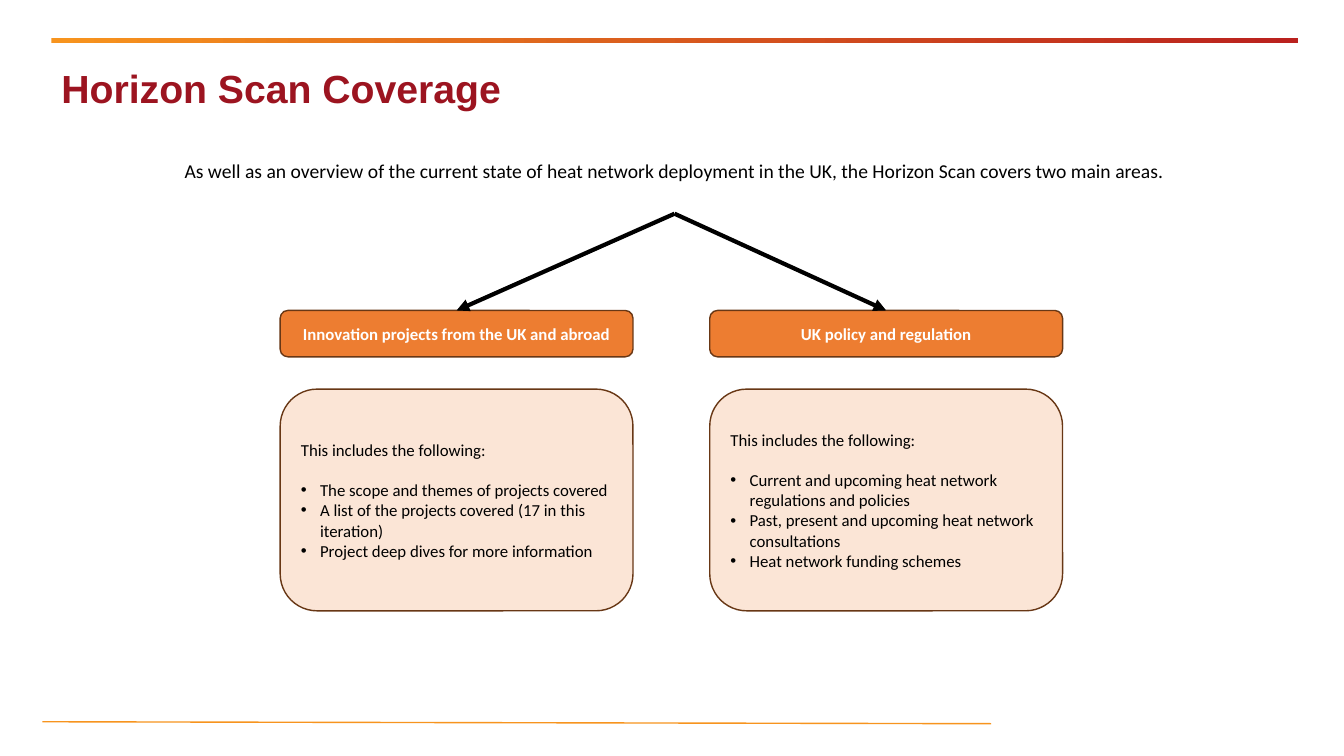
from dataclasses import dataclass

from lxml.etree import SubElement
from pptx import Presentation
from pptx.dml.color import RGBColor
from pptx.enum.dml import MSO_FILL
from pptx.enum.shapes import MSO_CONNECTOR, MSO_SHAPE
from pptx.enum.text import MSO_ANCHOR, PP_ALIGN
from pptx.oxml.ns import qn
from pptx.shapes.autoshape import Shape
from pptx.shapes.connector import Connector
from pptx.slide import Slide
from pptx.text.text import _Paragraph as Paragraph
from pptx.util import Inches, Length, Pt

BLACK = RGBColor(0x00, 0x00, 0x00)
WHITE = RGBColor(0xFF, 0xFF, 0xFF)
AMBER = RGBColor(0xF7, 0x94, 0x1E)
RED = RGBColor(0xBA, 0x21, 0x1E)
CRIMSON = RGBColor(0x9C, 0x14, 0x20)
ORANGE = RGBColor(0xED, 0x7D, 0x31)
PEACH = RGBColor(0xFB, 0xE5, 0xD6)
BROWN = RGBColor(0x68, 0x37, 0x15)

# The slide is a grid of 100 columns by 100 rows.
WIDTH, HEIGHT = Inches(13.33), Inches(7.5)
MARGIN, CONTENT_WIDTH = 3.83, 92.72
AREA_LEFT, AREA_WIDTH, AREA_PITCH = 20.85, 26.25, 31.96
HEADING_TOP, HEADING_HEIGHT = 41.07, 6.13
DETAIL_TOP, DETAIL_HEIGHT = 51.47, 29.33
FORK = (50.19, 28.27)
BULLET_INDENT = Inches(0.19)


@dataclass(frozen=True)
class Area:
    heading: str
    points: tuple[str, ...]


@dataclass(frozen=True)
class Region:
    """A place on the grid, in columns and rows."""
    left: float
    top: float
    width: float
    height: float

    def lengths(self) -> tuple[Length, Length, Length, Length]:
        return (columns(self.left), rows(self.top),
                columns(self.width), rows(self.height))


@dataclass(frozen=True)
class TextStyle:
    size: float
    color: RGBColor
    font: str = "Calibri"
    bold: bool = False
    align: PP_ALIGN = PP_ALIGN.LEFT


TITLE = TextStyle(28, CRIMSON, font="Arial", bold=True)
INTRO = TextStyle(14, BLACK, align=PP_ALIGN.CENTER)
HEADING = TextStyle(12, WHITE, bold=True, align=PP_ALIGN.CENTER)
DETAIL = TextStyle(12, BLACK)

AREAS = (
    Area("Innovation projects from the UK and abroad", (
        "The scope and themes of projects covered",
        "A list of the projects covered (17 in this iteration)",
        "Project deep dives for more information")),
    Area("UK policy and regulation", (
        "Current and upcoming heat network regulations and policies",
        "Past, present and upcoming heat network consultations",
        "Heat network funding schemes")),
)


def columns(count: float) -> Length:
    return Length(round(WIDTH * count / 100))


def rows(count: float) -> Length:
    return Length(round(HEIGHT * count / 100))


def style_paragraph(para: Paragraph, style: TextStyle) -> None:
    para.alignment = style.align
    for span in para.runs:
        span.font.name = style.font
        span.font.size = Pt(style.size)
        span.font.bold = style.bold
        span.font.color.rgb = style.color


def add_bullet(para: Paragraph) -> None:
    properties = para._p.get_or_add_pPr()
    properties.set("marL", str(BULLET_INDENT))
    properties.set("indent", str(-BULLET_INDENT))
    SubElement(properties, qn("a:buFont")).set("typeface", "Arial")
    SubElement(properties, qn("a:buChar")).set("char", "•")


def add_text(page: Slide, region: Region, text: str, style: TextStyle,
             anchor: MSO_ANCHOR) -> Paragraph:
    frame = page.shapes.add_textbox(*region.lengths()).text_frame
    frame.word_wrap = True
    frame.vertical_anchor = anchor
    frame.text = text
    style_paragraph(frame.paragraphs[0], style)
    return frame.paragraphs[0]


def add_rounded_box(page: Slide, region: Region, fill: RGBColor,
                    texts: tuple[str, ...], style: TextStyle) -> Shape:
    """Draw a rounded box whose texts after the first are bullets."""
    box = page.shapes.add_shape(MSO_SHAPE.ROUNDED_RECTANGLE, *region.lengths())
    box.shadow.inherit = False
    box.fill.solid()
    box.fill.fore_color.rgb = fill
    box.line.color.rgb = BROWN
    box.line.width = Pt(1)
    frame = box.text_frame
    frame.word_wrap = True
    frame.vertical_anchor = MSO_ANCHOR.MIDDLE
    frame.text = "\n".join(texts)
    for index, para in enumerate(frame.paragraphs):
        if index > 0:
            add_bullet(para)
        if index == 1:
            para.space_before = Pt(14.6)
        style_paragraph(para, style)
    return box


def add_line(page: Slide, start: tuple[float, float], end: tuple[float, float],
             color: RGBColor, weight: float) -> Connector:
    line = page.shapes.add_connector(
        MSO_CONNECTOR.STRAIGHT, columns(start[0]), rows(start[1]),
        columns(end[0]), rows(end[1]))
    line.line.color.rgb = color
    line.line.width = Pt(weight)
    SubElement(line._element.spPr, qn("a:effectLst"))
    return line


def add_top_band(page: Slide) -> None:
    band = page.shapes.add_shape(
        MSO_SHAPE.RECTANGLE, *Region(MARGIN, 5.07, CONTENT_WIDTH, 0.67).lengths())
    band.shadow.inherit = False
    band.line.fill.background()
    band.fill.gradient()
    band.fill.gradient_angle = 0
    for stop, color in zip(band.fill.gradient_stops, (AMBER, RED)):
        stop.color.rgb = color


def add_area(page: Slide, area: Area, left: float) -> None:
    """Draw the detail box, the heading and the arrow from the fork to it."""
    add_rounded_box(page, Region(left, DETAIL_TOP, AREA_WIDTH, DETAIL_HEIGHT),
                    PEACH, ("This includes the following:", *area.points), DETAIL)
    heading = add_rounded_box(
        page, Region(left, HEADING_TOP, AREA_WIDTH, HEADING_HEIGHT),
        ORANGE, (area.heading,), HEADING)
    arrow = add_line(page, FORK, (left + AREA_WIDTH / 2, HEADING_TOP), BLACK, 3)
    arrow.end_connect(heading, 0)
    SubElement(arrow.line._get_or_add_ln(), qn("a:tailEnd")).set("type", "triangle")


def main() -> None:
    deck = Presentation()
    deck.slide_width, deck.slide_height = WIDTH, HEIGHT
    page = deck.slides.add_slide(deck.slide_layouts[6])
    add_top_band(page)
    add_line(page, (3.15, 95.47), (73.74, 95.73), AMBER, 1)
    add_text(page, Region(MARGIN, 7.87, CONTENT_WIDTH, 7.6),
             "Horizon Scan Coverage", TITLE, MSO_ANCHOR.MIDDLE)
    intro = add_text(
        page, Region(MARGIN, 20.67, CONTENT_WIDTH, 7.6),
        "As well as an overview of the current state of heat network deployment "
        "in the UK, the Horizon Scan covers two main areas.",
        INTRO, MSO_ANCHOR.TOP)
    intro.line_spacing = 0.9
    for index, area in enumerate(AREAS):
        add_area(page, area, AREA_LEFT + index * AREA_PITCH)
    deck.save("out.pptx")


if __name__ == "__main__":
    main()
